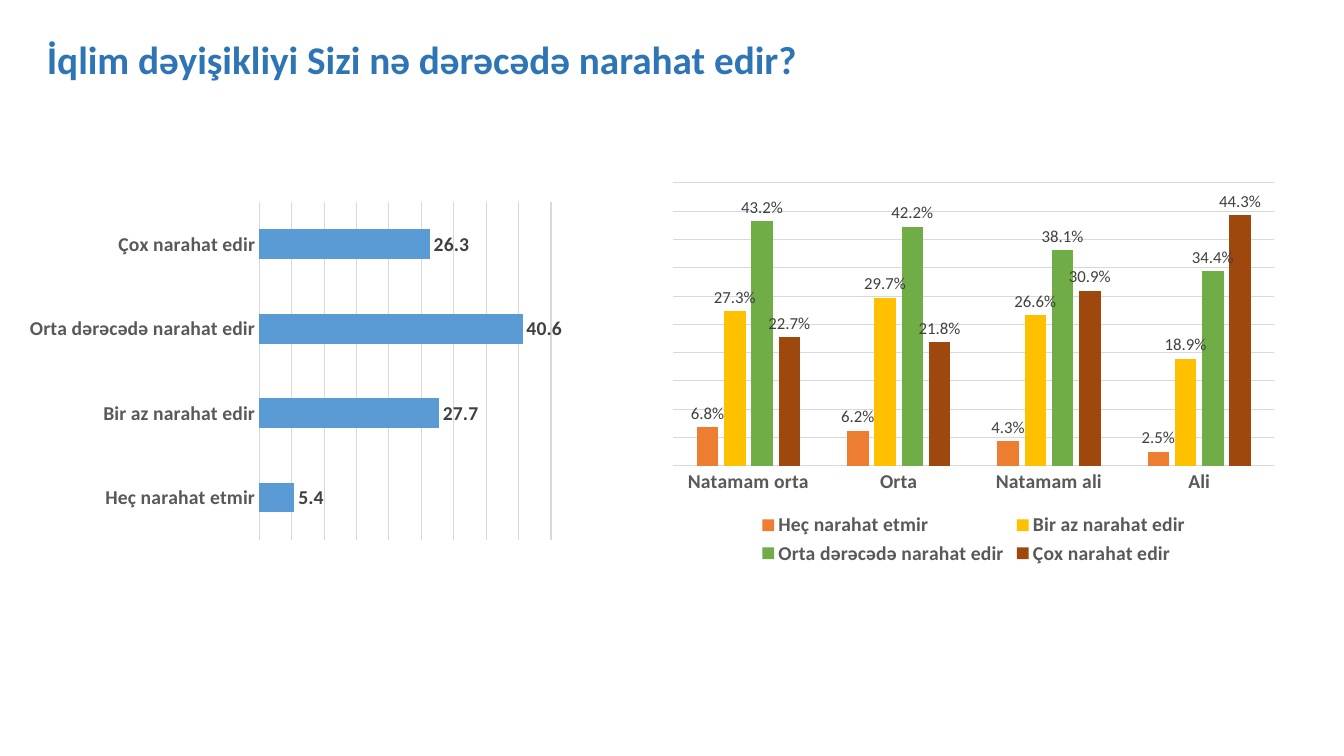
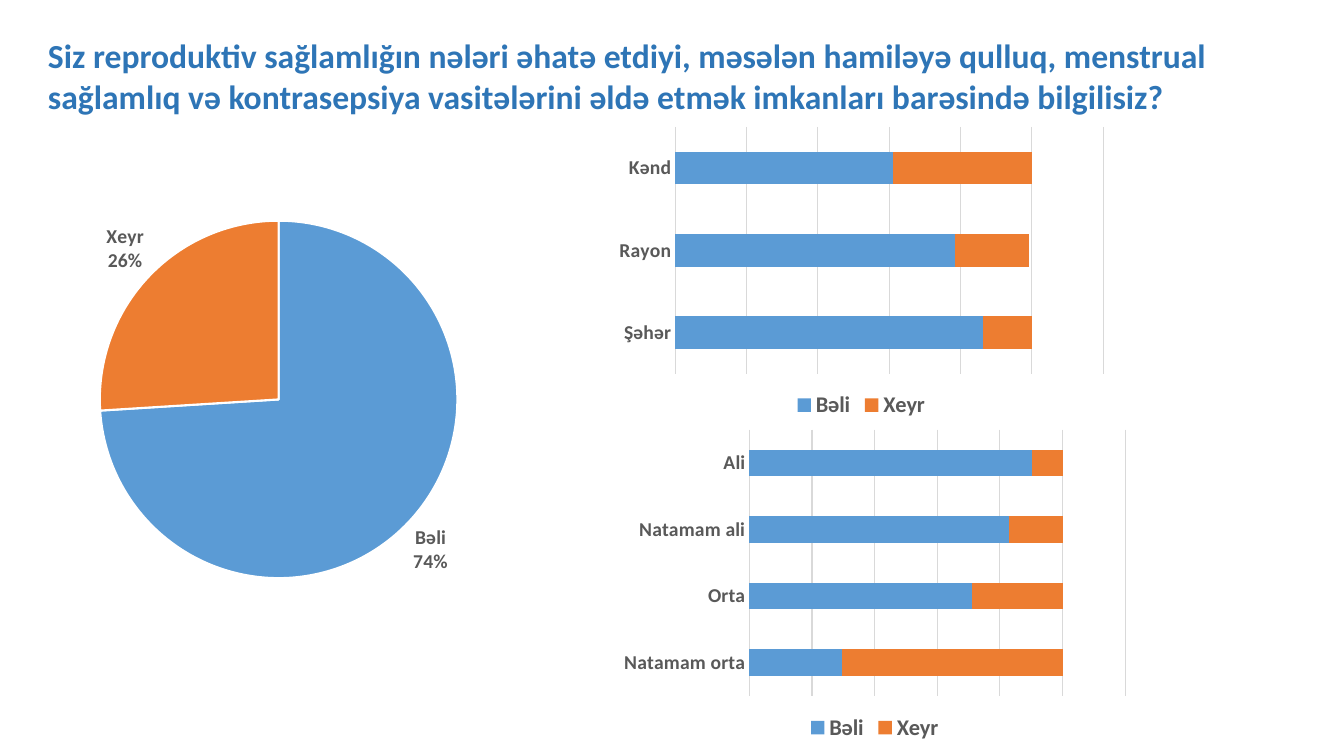
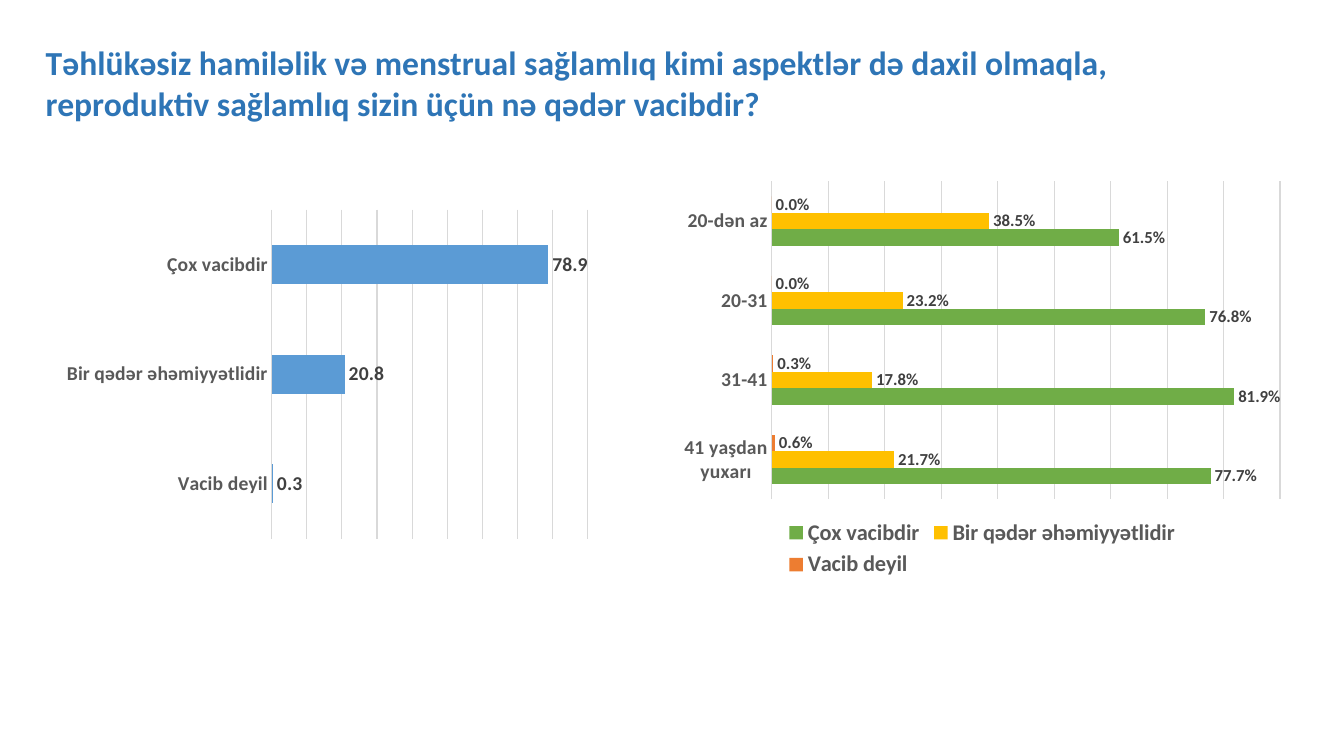
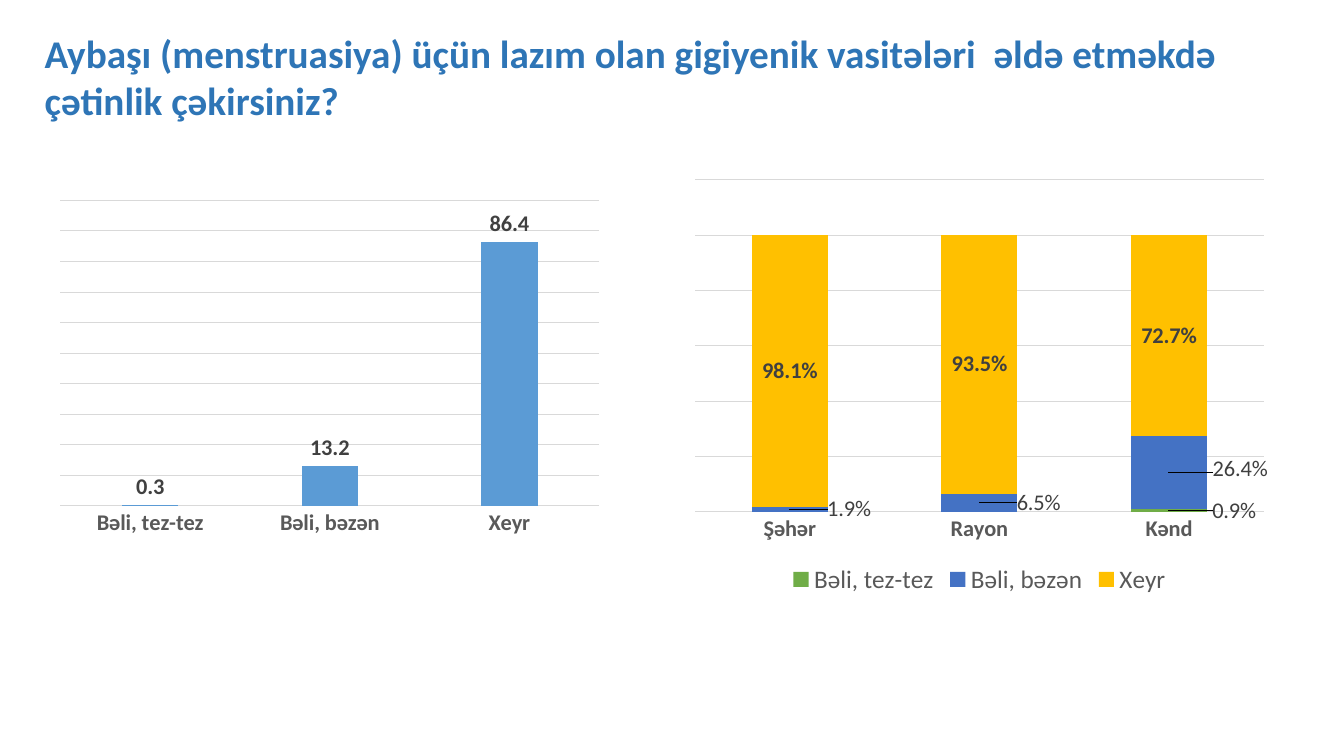
import pptx
import pptx.chart.data
import pptx.dml.color
import pptx.enum.chart
import pptx.enum.text
import pptx.oxml
import pptx.oxml.ns
import pptx.util

FONT = "Calibri"
TITLE, AXIS_TEXT, LABEL_TEXT, GRID_LINE = "2E75B6", "595959", "404040", "D9D9D9"
BLUE, ORANGE, GOLD, GREEN = "5B9BD5", "ED7D31", "FFC000", "70AD47"
BROWN, ROYAL = "9E480E", "4472C4"
NUMBER, PERCENT = "###0.0", "###0.0%"
COLUMNS, ROWS = 12, 12

KIND = pptx.enum.chart.XL_CHART_TYPE
LABEL_AT = pptx.enum.chart.XL_LABEL_POSITION

deck = pptx.Presentation()
deck.slide_width = pptx.util.Inches(13.33)
deck.slide_height = pptx.util.Inches(7.5)


def rgb(color):
    return pptx.dml.color.RGBColor.from_string(color)


def grid(box):
    """Turn (column, row, columns wide, rows high) into slide lengths."""
    column, row = deck.slide_width / COLUMNS, deck.slide_height / ROWS
    return [round(share * unit) for share, unit in zip(box, (column, row, column, row))]


def style(font, size, color, bold=False):
    font.name, font.size, font.bold = FONT, pptx.util.Pt(size), bold
    font.color.rgb = rgb(color)


def thin_line(line):
    line.color.rgb = rgb(GRID_LINE)
    line.width = pptx.util.Pt(0.75)


def chart_xml(tag, inner="", **attributes):
    listed = "".join(f' {key}="{value}"' for key, value in attributes.items())
    return pptx.oxml.parse_xml(
        f'<c:{tag} {pptx.oxml.ns.nsdecls("c")}{listed}>{inner}</c:{tag}>')


def question_slide(question, box, size, wrap=True):
    """Blank slide headed by a survey question."""
    slide = deck.slides.add_slide(deck.slide_layouts[6])
    frame = slide.shapes.add_textbox(*grid(box)).text_frame
    frame.word_wrap = wrap
    frame.auto_size = pptx.enum.text.MSO_AUTO_SIZE.SHAPE_TO_FIT_TEXT
    heading = frame.paragraphs[0]
    heading.text = question
    style(heading.font, size, TITLE, bold=True)
    return slide


def place_chart(slide, box, kind, answers, series):
    """Chart with base text style; series are (name, color, values)."""
    data = pptx.chart.data.CategoryChartData()
    data.categories = answers
    for name, _, values in series:
        data.add_series(name, values)
    chart = slide.shapes.add_chart(kind, *grid(box), data).chart
    style(chart.font, 10, "000000")
    chart.has_title = chart.has_legend = False
    chart.plots[0].vary_by_categories = False
    return chart


def label_values(series, size, bold, number_format, position):
    labels = series.data_labels
    labels.show_value = True
    labels.number_format, labels.number_format_is_linked = number_format, False
    labels.position = position
    style(labels.font, size, LABEL_TEXT, bold)
    return labels


def bar_chart(slide, box, kind, answers, series, top, step, gap, overlap=None,
              axis_size=14, number_format=PERCENT, legend=None, reverse=False):
    """Bars or columns with a hidden value axis; legend is (size, bold)."""
    chart = place_chart(slide, box, kind, answers, series)
    plot = chart.plots[0]
    plot.gap_width = gap
    if overlap is not None:
        plot.overlap = overlap
    for bars, (_, color, _) in zip(plot.series, series):
        bars.invert_if_negative = False
        bars.format.fill.solid()
        bars.format.fill.fore_color.rgb = rgb(color)

    # Axes
    names, scale = chart.category_axis, chart.value_axis
    names.major_tick_mark = names.minor_tick_mark = pptx.enum.chart.XL_TICK_MARK.NONE
    names.reverse_order = reverse
    style(names.tick_labels.font, axis_size, AXIS_TEXT, bold=True)
    thin_line(names.format.line)
    scale.minimum_scale, scale.maximum_scale, scale.major_unit = 0, top, step
    scale.has_major_gridlines = True
    thin_line(scale.major_gridlines.format.line)
    scale.tick_labels.number_format = number_format
    scale.tick_labels.number_format_is_linked = False
    scale.visible = False

    # Legend
    if legend:
        chart.has_legend = True
        chart.legend.position = pptx.enum.chart.XL_LEGEND_POSITION.BOTTOM
        chart.legend.include_in_layout = False
        style(chart.legend.font, legend[0], AXIS_TEXT, legend[1])
    return plot.series


def totals_chart(slide, box, kind, answers, shares, top, step, gap, size=14, overlap=None):
    """One blue series: the share of all respondents for each answer."""
    bars = bar_chart(slide, box, kind, answers, [("Series 1", BLUE, shares)], top, step,
                     gap, overlap, axis_size=size, number_format=NUMBER)
    label_values(bars[0], size, True, NUMBER, LABEL_AT.OUTSIDE_END)


def yes_no_bars(slide, box, groups, yes, no):
    """Stacked counts, with gridlines at every fifth of the largest total."""
    fifth = max(map(sum, zip(yes, no))) / 5
    bar_chart(slide, box, KIND.BAR_STACKED, groups,
              [("Bəli", BLUE, yes), ("Xeyr", ORANGE, no)],
              6 * fifth, fifth, 150, 100, legend=(16, True))


def yes_no_pie(slide, box, yes, no):
    chart = place_chart(slide, box, KIND.PIE, ["Bəli", "Xeyr"],
                        [("Series 1", BLUE, (yes, no))])
    plot = chart.plots[0]
    plot.vary_by_categories = True
    pie = plot.series[0]
    for index, color in enumerate((BLUE, ORANGE)):
        slice_format = pie.points[index].format
        slice_format.fill.solid()
        slice_format.fill.fore_color.rgb = rgb(color)
        slice_format.line.color.rgb = rgb("FFFFFF")
        slice_format.line.width = pptx.util.Pt(1.5)
    labels = label_values(pie, 14, True, "0%", LABEL_AT.OUTSIDE_END)
    style(labels.font, 14, AXIS_TEXT, bold=True)
    labels.show_value = False
    labels.show_category_name = labels.show_percentage = True
    bubble_flag = labels._element.find(pptx.oxml.ns.qn("c:showBubbleSize"))
    bubble_flag.addnext(chart_xml("separator", "\n"))


def move_labels(series, labels, shifts):
    """Shift point labels by shares of the chart; None removes a label."""
    for index, shift in enumerate(shifts):
        if shift is None:
            labels._element.insert(index, chart_xml(
                "dLbl", f'<c:idx val="{index}"/><c:delete val="1"/>'))
            continue
        label = series.points[index].data_label
        style(label.font, 16, LABEL_TEXT)
        label.position = LABEL_AT.CENTER
        point = labels._element.xpath(f"c:dLbl[c:idx/@val='{index}']/c:idx")[0]
        x, y = shift
        point.addnext(chart_xml("numFmt", formatCode=PERCENT, sourceLinked=0))
        point.addnext(chart_xml(
            "layout", f'<c:manualLayout><c:x val="{x}"/><c:y val="{y}"/></c:manualLayout>'))


def climate_slide():
    slide = question_slide("İqlim dəyişikliyi Sizi nə dərəcədə narahat edir?",
                           (0.33, 0.48, 6.96, 0.91), 28, wrap=False)
    worries = ["Heç narahat etmir", "Bir az narahat edir",
               "Orta dərəcədə narahat edir", "Çox narahat edir"]
    totals_chart(slide, (0.17, 3.1, 4.85, 5.58), KIND.BAR_CLUSTERED, worries,
                 (5.4, 27.7, 40.6, 26.3), 45, 5, 182)
    by_education = [(0.068, 0.062, 0.043, 0.025), (0.273, 0.297, 0.266, 0.189),
                    (0.432, 0.422, 0.381, 0.344), (0.227, 0.218, 0.309, 0.443)]
    for bars in bar_chart(slide, (5.9, 2.78, 5.59, 6.26), KIND.COLUMN_CLUSTERED,
                          ["Natamam orta", "Orta", "Natamam ali", "Ali"],
                          list(zip(worries, (ORANGE, GOLD, GREEN, BROWN), by_education)),
                          0.5, 0.05, 219, -27, legend=(14, True)):
        label_values(bars, 12, False, PERCENT, LABEL_AT.OUTSIDE_END)


def awareness_slide():
    slide = question_slide(
        "Siz reproduktiv sağlamlığın nələri əhatə etdiyi, məsələn hamiləyə qulluq, "
        "menstrual sağlamlıq və kontrasepsiya vasitələrini əldə etmək imkanları "
        "barəsində bilgilisiz?", (0.34, 0.48, 11.49, 1.46), 24)
    yes_no_pie(slide, (-0.34, 2.91, 5.63, 6.86), 74, 26)
    yes_no_bars(slide, (5.44, 1.92, 4.5, 4.8), ["Şəhər", "Rayon", "Kənd"],
                (100, 91, 71), (16, 24, 45))
    yes_no_bars(slide, (5.48, 6.72, 4.66, 5.12),
                ["Natamam orta", "Orta", "Natamam ali", "Ali"],
                (33, 79, 92, 100), (78, 32, 19, 11))


def importance_slide():
    slide = question_slide(
        "Təhlükəsiz hamiləlik və menstrual sağlamlıq kimi aspektlər də daxil olmaqla, "
        "reproduktiv sağlamlıq sizin üçün nə qədər vacibdir?",
        (0.32, 0.59, 11.05, 1.46), 24)
    ratings = ["Vacib deyil", "Bir qədər əhəmiyyətlidir", "Çox vacibdir"]
    totals_chart(slide, (0.5, 3.22, 4.84, 5.44), KIND.BAR_CLUSTERED, ratings,
                 (0.3, 20.8, 78.9), 90, 10, 182)
    by_age = [(0, 0, 0.003, 0.006), (0.385, 0.232, 0.178, 0.217),
              (0.615, 0.768, 0.819, 0.777)]
    for bars in bar_chart(slide, (6, 2.75, 5.54, 6.5), KIND.BAR_CLUSTERED,
                          ["20-dən az", "20-31", "31-41", "41 yaşdan yuxarı"],
                          list(zip(ratings, (ORANGE, GOLD, GREEN), by_age)),
                          0.9, 0.1, 182, legend=(16, True), reverse=True):
        label_values(bars, 12, True, PERCENT, LABEL_AT.OUTSIDE_END)


def hygiene_slide():
    slide = question_slide(
        "Aybaşı (menstruasiya) üçün lazım olan gigiyenik vasitələri  əldə etməkdə "
        "çətinlik çəkirsiniz?", (0.31, 0.38, 11.38, 1.66), 28)
    answers = ["Bəli, tez-tez", "Bəli, bəzən", "Xeyr"]
    totals_chart(slide, (0.44, 3.07, 5.01, 5.57), KIND.COLUMN_CLUSTERED, answers,
                 (0.3, 13.2, 86.4), 100, 10, 219, size=16, overlap=-27)
    by_place = [(0, 0, 0.009), (0.019, 0.065, 0.264), (0.981, 0.935, 0.727)]
    often, sometimes, never = bar_chart(
        slide, (6.1, 2.72, 5.29, 6.8), KIND.COLUMN_STACKED, ["Şəhər", "Rayon", "Kənd"],
        list(zip(answers, (GREEN, ROYAL, GOLD), by_place)),
        1.2, 0.2, 150, 100, axis_size=16, legend=(18, False))
    label_values(never, 16, True, PERCENT, LABEL_AT.CENTER)
    # Labels of the thin segments stand to the right of their columns
    for bars, shifts in ((often, (None, None, (0.11, 0))),
                         (sometimes, ((0.1, 0), (0.1, 0), (0.12, -0.01)))):
        labels = label_values(bars, 16, False, PERCENT, LABEL_AT.CENTER)
        move_labels(bars, labels, shifts)


def main():
    climate_slide()
    awareness_slide()
    importance_slide()
    hygiene_slide()
    deck.save("out.pptx")


if __name__ == "__main__":
    main()
